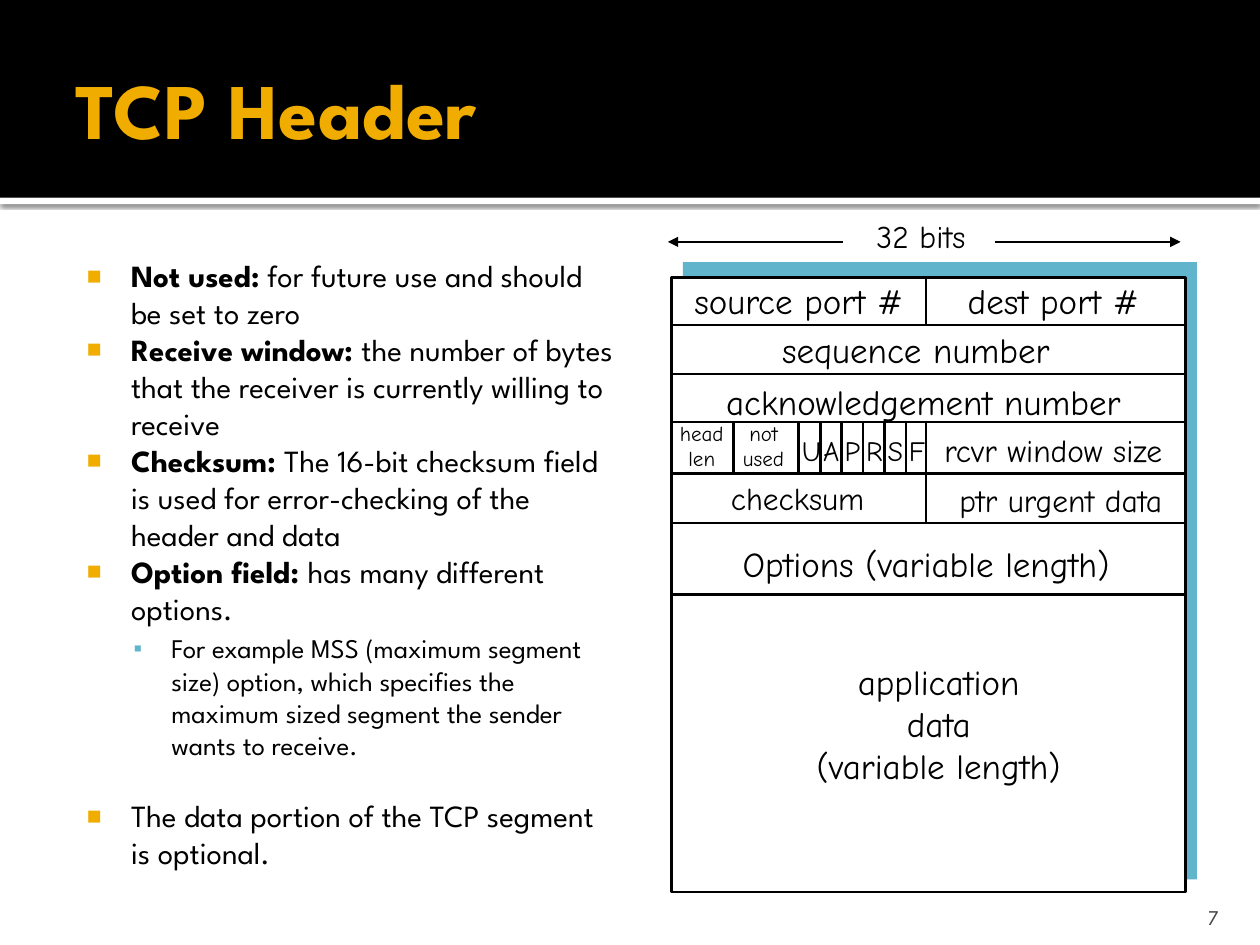
from lxml.etree import SubElement
from pptx import Presentation
from pptx.dml.color import RGBColor
from pptx.enum.shapes import MSO_CONNECTOR, MSO_SHAPE
from pptx.enum.text import MSO_ANCHOR, MSO_AUTO_SIZE, PP_ALIGN
from pptx.oxml import parse_xml
from pptx.oxml.ns import nsdecls, qn
from pptx.util import Inches, Pt

COLORS = {"black": "000000", "white": "FFFFFF", "gold": "F0AD00",
          "blue": "60B5CC", "gray": "454545"}
TEXT_FONT, DIAGRAM_FONT = "League Spartan", "Comic Neue"

# Edges of the header diagram, in inches
LEFT, RIGHT, TOP, BOTTOM = 5.33, 9.41, 2.2, 7.08
MIDDLE = 7.35
ROW_EDGES = [2.58, 2.97, 3.35, 3.76, 4.15, 4.72]
FLAGS_LEFT, FLAG_WIDTH = 6.34, 0.17

BULLETS = [  # bold lead, text, level, space before in points
    ("Not used:", " for future use and should be set to zero", 0, 0),
    ("Receive window: ",
     "the number of bytes that the receiver is currently willing to receive", 0, 0),
    ("Checksum: ",
     "The 16-bit checksum field is used for error-checking of the header and data", 0, 0),
    ("Option field: ", "has many different options.", 0, 0),
    ("", "For example MSS (maximum segment size) option, which specifies the "
         "maximum sized segment the sender wants to receive.", 1, 3),
    ("", "The data portion of the TCP segment is optional.", 0, 20.5),
]
LEVELS = [  # size, left margin, hanging indent, bullet, its colour and percent
    (17.6, 0.48, 0.35, "■", "gold", 80),
    (15.4, 0.8, 0.3, "▪", "blue", 90),
]
FIELDS = [  # text, centre, top, size
    ("32 bits", 7.31, 1.67, 18),
    ("source port #", 6.34, 2.17, 20),
    ("dest port #", 8.36, 2.17, 20),
    ("sequence number", 7.27, 2.56, 20),
    ("acknowledgement number", 7.33, 2.97, 20),
    ("head\nlen", 5.57, 3.29, 12),
    ("not\nused", 6.06, 3.29, 12),
    ("rcvr window size", 8.36, 3.37, 18),
    ("checksum", 6.33, 3.75, 18),
    ("ptr urgent data", 8.42, 3.77, 18),
    ("Options (variable length)", 7.35, 4.26, 20),
    ("application\ndata\n(variable length)", 7.45, 5.19, 20),
]


def color(name):
    return RGBColor.from_string(COLORS[name])


def place(shape, left, top, width, height):
    shape.left, shape.top = Inches(left), Inches(top)
    shape.width, shape.height = Inches(width), Inches(height)


def set_insets(frame, left, top, right, bottom):
    frame.margin_left, frame.margin_top = Inches(left), Inches(top)
    frame.margin_right, frame.margin_bottom = Inches(right), Inches(bottom)


def style(span, font, size, name, bold=False):
    span.font.name, span.font.size, span.font.bold = font, Pt(size), bold
    span.font.color.rgb = color(name)


def add_rect(page, left, top, width, height, fill, line=None):
    rect = page.shapes.add_shape(MSO_SHAPE.RECTANGLE, Inches(left), Inches(top),
                                 Inches(width), Inches(height))
    rect.shadow.inherit = False
    rect.fill.solid()
    rect.fill.fore_color.rgb = color(fill)
    if line:
        rect.line.color.rgb = color(line)
        rect.line.width = Pt(1.5)
    else:
        rect.line.fill.background()
    return rect


def add_line(page, x1, y1, x2, y2, arrow=False):
    line = page.shapes.add_connector(MSO_CONNECTOR.STRAIGHT, Inches(x1), Inches(y1),
                                     Inches(x2), Inches(y2))
    line.line.color.rgb = color("black")
    line.line.width = Pt(1.5)
    if arrow:
        SubElement(line.line._get_or_add_ln(), qn("a:tailEnd"), type="triangle")
    SubElement(line.element.spPr, qn("a:effectLst"))


def add_field(page, text, center, top, size):
    """Add a centred diagram label whose box follows its text."""
    lines = text.split("\n")
    width = max(map(len, lines)) * size * 0.0075 + 0.2
    height = len(lines) * size * 0.0167 + 0.1
    box = page.shapes.add_textbox(Inches(center - width / 2), Inches(top),
                                  Inches(width), Inches(height))
    frame = box.text_frame
    frame.text = text
    frame.word_wrap = False
    frame.auto_size = MSO_AUTO_SIZE.SHAPE_TO_FIT_TEXT
    for para in frame.paragraphs:
        para.alignment = PP_ALIGN.CENTER
        style(para.runs[0], DIAGRAM_FONT, size, "black")


def set_bullet(para, margin, hang, char, name, percent):
    props = para._p.get_or_add_pPr()
    props.set("marL", str(Inches(margin)))
    props.set("indent", str(-Inches(hang)))
    bullet_color = SubElement(props, qn("a:buClr"))
    SubElement(bullet_color, qn("a:srgbClr"), val=COLORS[name])
    SubElement(props, qn("a:buSzPct"), val=str(percent * 1000))
    SubElement(props, qn("a:buChar"), char=char)


def add_banner(page):
    """Put the black banner and its shadowed white edge behind the placeholders."""
    edge = add_rect(page, 0, 1.57, 10, 0.05, "white")
    edge.element.spPr.find(qn("a:effectLst")).append(parse_xml(
        f'<a:outerShdw {nsdecls("a")} blurRad="{Pt(2.5)}" dist="{Pt(0.8)}" '
        f'dir="5400000" algn="tl" rotWithShape="0"><a:srgbClr val="{COLORS["black"]}">'
        '<a:alpha val="60000"/></a:srgbClr></a:outerShdw>'))
    banner = add_rect(page, 0, 0, 10, 1.57, "black")
    tree = edge.element.getparent()
    for position, rect in enumerate((edge, banner), start=2):
        tree.insert(position, rect.element)


def fill_title(title):
    place(title, 0.5, 0.17, 9, 1.37)
    frame = title.text_frame
    frame.text = "TCP Header"
    frame.vertical_anchor = MSO_ANCHOR.MIDDLE
    frame.auto_size = MSO_AUTO_SIZE.NONE
    set_insets(frame, 0.1, 0.05, 0.05, 0.05)
    frame.paragraphs[0].alignment = PP_ALIGN.LEFT
    style(frame.paragraphs[0].runs[0], TEXT_FONT, 45, "gold", bold=True)


def fill_body(body):
    place(body, 0.5, 1.94, 4.49, 5.06)
    frame = body.text_frame
    frame.auto_size = MSO_AUTO_SIZE.NONE
    set_insets(frame, 0.06, 0.1, 0.1, 0.05)
    frame.text = "\n".join(lead for lead, *_ in BULLETS)
    for para, (lead, text, level, space) in zip(frame.paragraphs, BULLETS):
        size, *bullet = LEVELS[level]
        para.level = level
        para.space_before = Pt(space)
        set_bullet(para, *bullet)
        for span in para.runs:
            style(span, TEXT_FONT, size, "black", bold=True)
        span = para.add_run()
        span.text = text
        style(span, TEXT_FONT, size, "black")


def add_page_number(page, number):
    box = page.shapes.add_textbox(Inches(8.97), Inches(7.08), Inches(0.8), Inches(0.3))
    frame = box.text_frame
    frame.text = number
    frame.word_wrap = True
    frame.vertical_anchor = MSO_ANCHOR.BOTTOM
    set_insets(frame, 0.1, 0.05, 0.1, 0)
    frame.paragraphs[0].alignment = PP_ALIGN.RIGHT
    style(frame.paragraphs[0].runs[0], TEXT_FONT, 12, "gray")


def add_header_diagram(page):
    add_rect(page, 5.42, 2.08, 4.08, 4.9, "blue")
    add_rect(page, LEFT, TOP, RIGHT - LEFT, BOTTOM - TOP, "white", line="black")
    for y in ROW_EDGES:
        add_line(page, LEFT, y, RIGHT, y)
    ports, _, flags_top, flags_bottom, checksum_bottom, _ = ROW_EDGES
    add_line(page, MIDDLE, TOP, MIDDLE, ports)
    add_line(page, MIDDLE, flags_top, MIDDLE, checksum_bottom)
    add_line(page, 5.82, flags_top, 5.82, flags_bottom)
    for index, flag in enumerate("UAPRSF"):
        x = FLAGS_LEFT + index * FLAG_WIDTH
        add_line(page, x, flags_top, x, flags_bottom)
        add_field(page, flag, x + FLAG_WIDTH / 2, 3.39, 16)
    add_line(page, 6.69, 1.92, 5.3, 1.92, arrow=True)
    add_line(page, 7.9, 1.92, 9.37, 1.92, arrow=True)
    for field in FIELDS:
        add_field(page, *field)


def main():
    deck = Presentation()
    deck.slide_width, deck.slide_height = Inches(10), Inches(7.5)
    page = deck.slides.add_slide(deck.slide_layouts[1])
    add_banner(page)
    fill_title(page.shapes.title)
    fill_body(page.placeholders[1])
    add_page_number(page, "7")
    add_header_diagram(page)
    deck.save("out.pptx")


if __name__ == "__main__":
    main()
